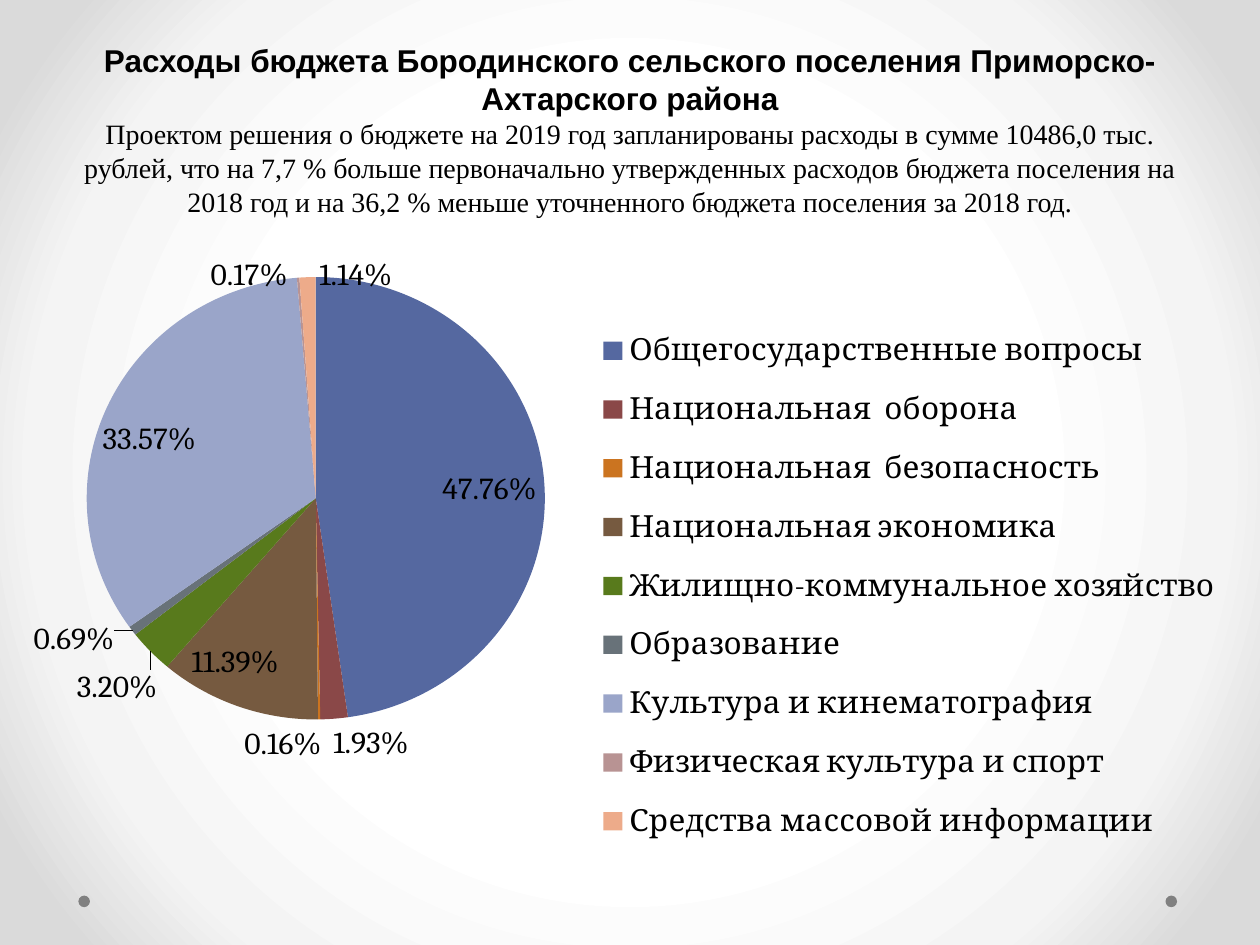
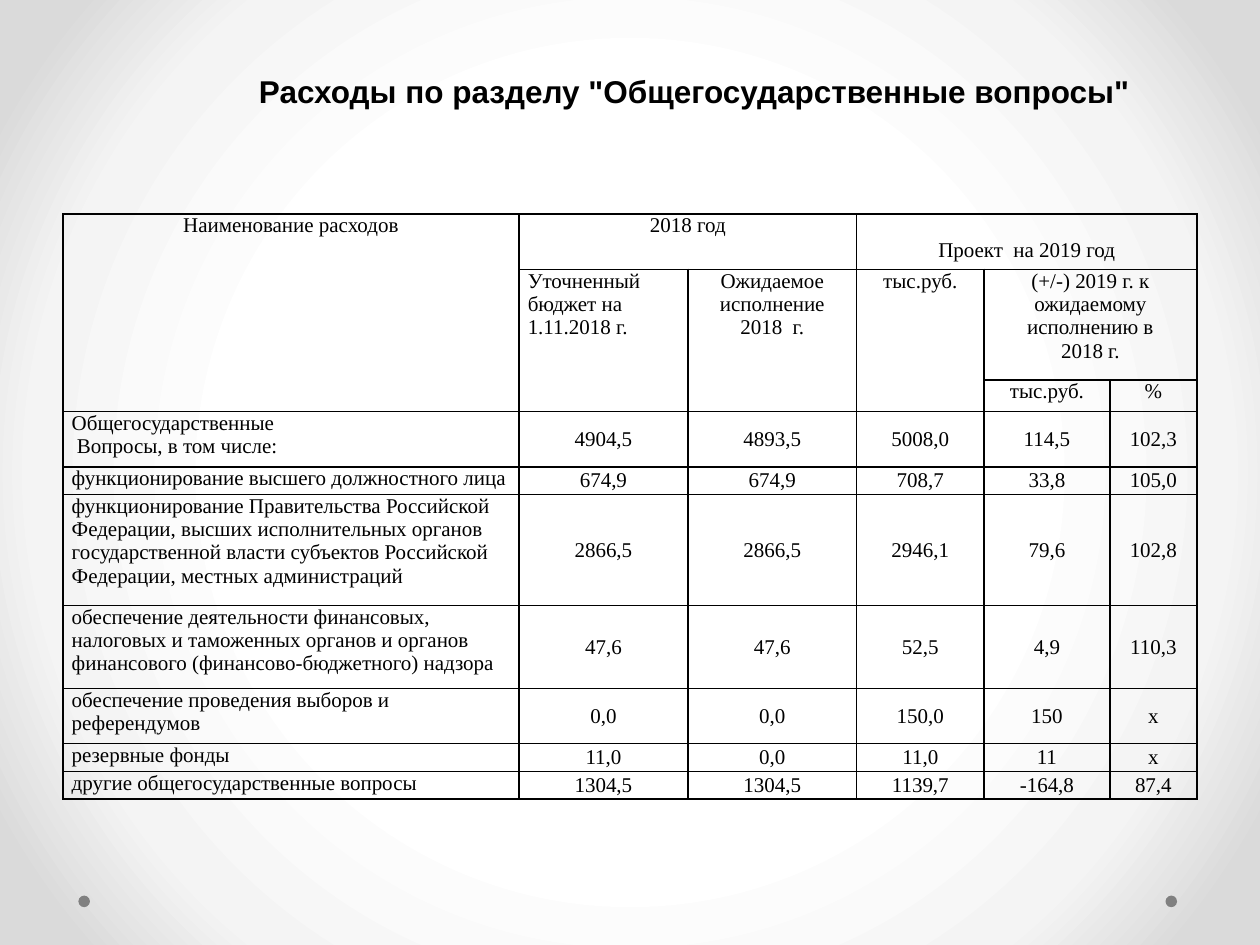
from pptx import Presentation
from pptx.chart.data import CategoryChartData
from pptx.dml.color import RGBColor
from pptx.enum.chart import XL_CHART_TYPE, XL_LABEL_POSITION, XL_LEGEND_POSITION
from pptx.enum.shapes import MSO_SHAPE
from pptx.enum.text import MSO_ANCHOR, MSO_AUTO_SIZE, PP_ALIGN
from pptx.oxml import parse_xml
from pptx.oxml.ns import nsdecls, qn
from pptx.util import Pt

BLACK, DOT_GREY = "000000", "808080"
HEADING = {"name": "Arial", "size": Pt(18), "bold": True}
BODY = {"name": "Times New Roman", "size": Pt(16), "bold": False}
CELL = {"name": "Times New Roman", "size": Pt(12), "bold": False}
CHART = {"name": "Cambria", "size": Pt(18), "bold": False}
BACKGROUND = [(50, "FFFFFF"), (76, "F4F4F4"), (92, "DADADA")]

# shares of the chart's width and height
PIE_AREA = {"x": 0.02, "y": 0.03, "w": 0.44, "h": 0.68}
LEGEND_AREA = {"x": 0.46, "y": 0.08, "w": 0.54, "h": 0.85}

# category, percent, colour, label position, label shift as a share of the chart
EXPENSES = [
    ("Общегосударственные вопросы", 47.76, "5568A0", "inEnd", (0, 0.01)),
    ("Национальная  оборона", 1.93, "8A4848", "outEnd", (0.03, 0)),
    ("Национальная  безопасность", 0.16, "CB7420", "outEnd", (-0.03, 0)),
    ("Национальная экономика", 11.39, "765A40", "inEnd", (-0.04, -0.03)),
    ("Жилищно-коммунальное хозяйство", 3.2, "587A1C", "outEnd", (0.01, 0.02)),
    ("Образование", 0.69, "687279", "outEnd", (-0.01, -0.02)),
    ("Культура и кинематография", 33.57, "9AA5C9", "inEnd", (-0.01, 0.02)),
    ("Физическая культура и спорт", 0.17, "B89393", "outEnd", (-0.04, 0.02)),
    ("Средства массовой информации", 1.14, "EDAB8A", "outEnd", (0.04, 0.02)),
]

COLUMNS = [260.6, 96.5, 96.5, 72.7, 72, 49.7]
ROWS = [31.6, 63.3, 18, 31.6, 15.8, 63.3, 47.5, 31.6, 15.8, 15.8]
# row, column, rows spanned, columns spanned, text
HEADER = [
    (0, 0, 3, 1, "Наименование расходов"),
    (0, 1, 1, 2, "2018 год"),
    (0, 3, 1, 3, "Проект  на 2019 год"),
    (1, 1, 2, 1, "Уточненный бюджет на 1.11.2018 г."),
    (1, 2, 2, 1, "Ожидаемое\nисполнение\n2018  г."),
    (1, 3, 2, 1, "тыс.руб."),
    (1, 4, 1, 2, "(+/-) 2019 г. к ожидаемому\nисполнению в\n2018 г."),
    (2, 4, 1, 1, "тыс.руб."),
    (2, 5, 1, 1, "%"),
]
SPENDING = [
    ("Общегосударственные\n Вопросы, в том числе:",
     "4904,5", "4893,5", "5008,0", "114,5", "102,3"),
    ("функционирование высшего должностного лица",
     "674,9", "674,9", "708,7", "33,8", "105,0"),
    ("функционирование Правительства Российской Федерации, высших исполнительных "
     "органов государственной власти субъектов Российской Федерации, местных администраций",
     "2866,5", "2866,5", "2946,1", "79,6", "102,8"),
    ("обеспечение деятельности финансовых, налоговых и таможенных органов и органов "
     "финансового (финансово-бюджетного) надзора",
     "47,6", "47,6", "52,5", "4,9", "110,3"),
    ("обеспечение проведения выборов и референдумов",
     "0,0", "0,0", "150,0", "150", "х"),
    ("резервные фонды", "11,0", "0,0", "11,0", "11", "х"),
    ("другие общегосударственные вопросы",
     "1304,5", "1304,5", "1139,7", "-164,8", "87,4"),
]


def rgb(color):
    return RGBColor.from_string(color)


def set_all(obj, values):
    for name, value in values.items():
        setattr(obj, name, value)


def style_font(font, style):
    set_all(font, style)
    font.color.rgb = rgb(BLACK)


def layout_xml(**values):
    items = "".join(f'<c:{k} val="{v}"/>' for k, v in values.items())
    return f'<c:layout {nsdecls("c")}><c:manualLayout>{items}</c:manualLayout></c:layout>'


def place(element, index, area, **target):
    """Give a part of a chart a fixed place, as shares of the chart."""
    for old in element.findall(qn("c:layout")):
        element.remove(old)
    element.insert(index, parse_xml(layout_xml(**target, xMode="edge", yMode="edge", **area)))


def label_xml(index, position, shift):
    x, y = shift
    flags = "".join(f'<c:show{k} val="{int(k == "Percent")}"/>' for k in
                    ("LegendKey", "Val", "CatName", "SerName", "Percent", "BubbleSize"))
    return (f'<c:dLbl {nsdecls("c")}><c:idx val="{index}"/>{layout_xml(x=x, y=y)}'
            f'<c:numFmt formatCode="0.00%" sourceLinked="0"/>'
            f'<c:dLblPos val="{position}"/>{flags}</c:dLbl>')


class Deck:
    def __init__(self):
        self.prs = Presentation()
        set_all(self.prs, {"slide_width": Pt(720), "slide_height": Pt(540)})
        self.s = None
        self.set_background()

    def set_background(self):
        master = self.prs.slide_master
        master.background.fill.solid()
        bg = master.element.find(".//" + qn("p:bgPr"))
        stops = "".join(f'<a:gs pos="{pos * 1000}"><a:srgbClr val="{color}"/></a:gs>'
                        for pos, color in BACKGROUND)
        bg.replace(bg.find(qn("a:solidFill")), parse_xml(
            f'<a:gradFill {nsdecls("a")} rotWithShape="1"><a:gsLst>{stops}</a:gsLst>'
            '<a:path path="circle"><a:fillToRect l="50000" t="50000" r="50000" b="50000"/>'
            '</a:path></a:gradFill>'))

    def slide(self):
        self.s = self.prs.slides.add_slide(self.prs.slide_layouts[5])
        for x in (44.8, 666):
            dot = self.s.shapes.add_shape(MSO_SHAPE.OVAL, Pt(x), Pt(511.8), Pt(6.6), Pt(6.6))
            dot.shadow.inherit = False
            dot.fill.solid()
            dot.fill.fore_color.rgb = rgb(DOT_GREY)
            dot.line.fill.background()

    def title(self, x, y, w, h, paragraphs, indent=0):
        """Fill the title; indent moves its centred text to the right."""
        sp = self.s.shapes.title
        set_all(sp, {"left": Pt(x), "top": Pt(y), "width": Pt(w), "height": Pt(h)})
        tf = sp.text_frame
        set_all(tf, {"word_wrap": True, "auto_size": MSO_AUTO_SIZE.NONE,
                     "vertical_anchor": MSO_ANCHOR.BOTTOM, "margin_left": Pt(7.2 + indent)})
        self.fill_text(tf, paragraphs, PP_ALIGN.CENTER)

    def fill_text(self, tf, paragraphs, align):
        for i, (text, style) in enumerate(paragraphs):
            p = tf.add_paragraph() if i else tf.paragraphs[0]
            p.alignment = align
            r = p.add_run()
            r.text = text
            style_font(r.font, style)

    def pie(self, x, y, w, h, slices):
        data = CategoryChartData()
        data.categories = [row[0] for row in slices]
        data.add_series("Series 1", [row[1] for row in slices])
        chart = self.s.shapes.add_chart(XL_CHART_TYPE.PIE, Pt(x), Pt(y), Pt(w), Pt(h), data).chart
        set_all(chart, {"has_title": False, "has_legend": True})
        style_font(chart.font, CHART)
        set_all(chart.legend, {"position": XL_LEGEND_POSITION.RIGHT, "include_in_layout": False})
        style_font(chart.legend.font, CHART)
        place(chart.element.find(".//" + qn("c:plotArea")), 0, PIE_AREA, layoutTarget="inner")
        place(chart.element.find(".//" + qn("c:legend")), 1, LEGEND_AREA)

        chart.plots[0].vary_by_categories = True
        series = chart.plots[0].series[0]
        labels = series.data_labels
        set_all(labels, {"number_format": "0.00%", "number_format_is_linked": False,
                         "show_percentage": True, "show_value": False,
                         "position": XL_LABEL_POSITION.BEST_FIT})
        style_font(labels.font, CHART)
        holder = chart.element.find(".//" + qn("c:dLbls"))
        for i, (_, _, color, position, shift) in enumerate(slices):
            fill = series.points[i].format.fill
            fill.solid()
            fill.fore_color.rgb = rgb(color)
            holder.insert(i, parse_xml(label_xml(i, position, shift)))

    def table(self, x, y, columns, rows):
        frame = self.s.shapes.add_table(len(rows), len(columns), Pt(x), Pt(y),
                                        Pt(sum(columns)), Pt(sum(rows)))
        table = frame.table
        set_all(table, {"first_row": False, "horz_banding": False})
        for column, width in zip(table.columns, columns):
            column.width = Pt(width)
        for row, height in zip(table.rows, rows):
            row.height = Pt(height)
        for cell in table.iter_cells():
            set_all(cell, {"margin_left": Pt(5), "margin_right": Pt(5),
                           "margin_top": 0, "margin_bottom": 0})
            self.border(cell)
            cell.fill.background()
        return table

    def border(self, cell):
        props = cell._tc.get_or_add_tcPr()
        for side in ("lnL", "lnR", "lnT", "lnB"):
            props.append(parse_xml(
                f'<a:{side} {nsdecls("a")} w="{Pt(1)}"><a:solidFill><a:srgbClr val="{BLACK}"/>'
                f'</a:solidFill></a:{side}>'))

    def cell(self, cell, text, align=PP_ALIGN.CENTER, anchor=MSO_ANCHOR.TOP):
        cell.vertical_anchor = anchor
        self.fill_text(cell.text_frame, [(line, CELL) for line in text.split("\n")], align)


def expenses_slide(deck):
    deck.slide()
    deck.title(36, 0, 648, 128, [
        ("Расходы бюджета Бородинского сельского поселения Приморско-Ахтарского района", HEADING),
        ("Проектом решения о бюджете на 2019 год запланированы расходы в сумме 10486,0 тыс. "
         "рублей, что на 7,7 % больше первоначально утвержденных расходов бюджета поселения на "
         "2018 год и на 36,2 % меньше уточненного бюджета поселения за 2018 год.", BODY)])
    deck.pie(14.4, 134, 692, 385, EXPENSES)


def spending_slide(deck):
    deck.slide()
    deck.title(36.7, 21, 648, 45.4,
               [('Расходы по разделу "Общегосударственные вопросы"', HEADING)], indent=72)
    table = deck.table(36, 122.4, COLUMNS, ROWS)
    for row, col, height, width, text in HEADER:
        cell = table.cell(row, col)
        if height * width > 1:
            cell.merge(table.cell(row + height - 1, col + width - 1))
        deck.cell(cell, text, PP_ALIGN.LEFT if (row, col) == (1, 1) else PP_ALIGN.CENTER)
    table.cell(0, 3).margin_top = Pt(13.8)
    for row, (name, *values) in enumerate(SPENDING, start=3):
        deck.cell(table.cell(row, 0), name, PP_ALIGN.LEFT)
        for col, value in enumerate(values, start=1):
            deck.cell(table.cell(row, col), value, anchor=MSO_ANCHOR.MIDDLE)


def main():
    deck = Deck()
    expenses_slide(deck)
    spending_slide(deck)
    deck.prs.save("out.pptx")


if __name__ == "__main__":
    main()
